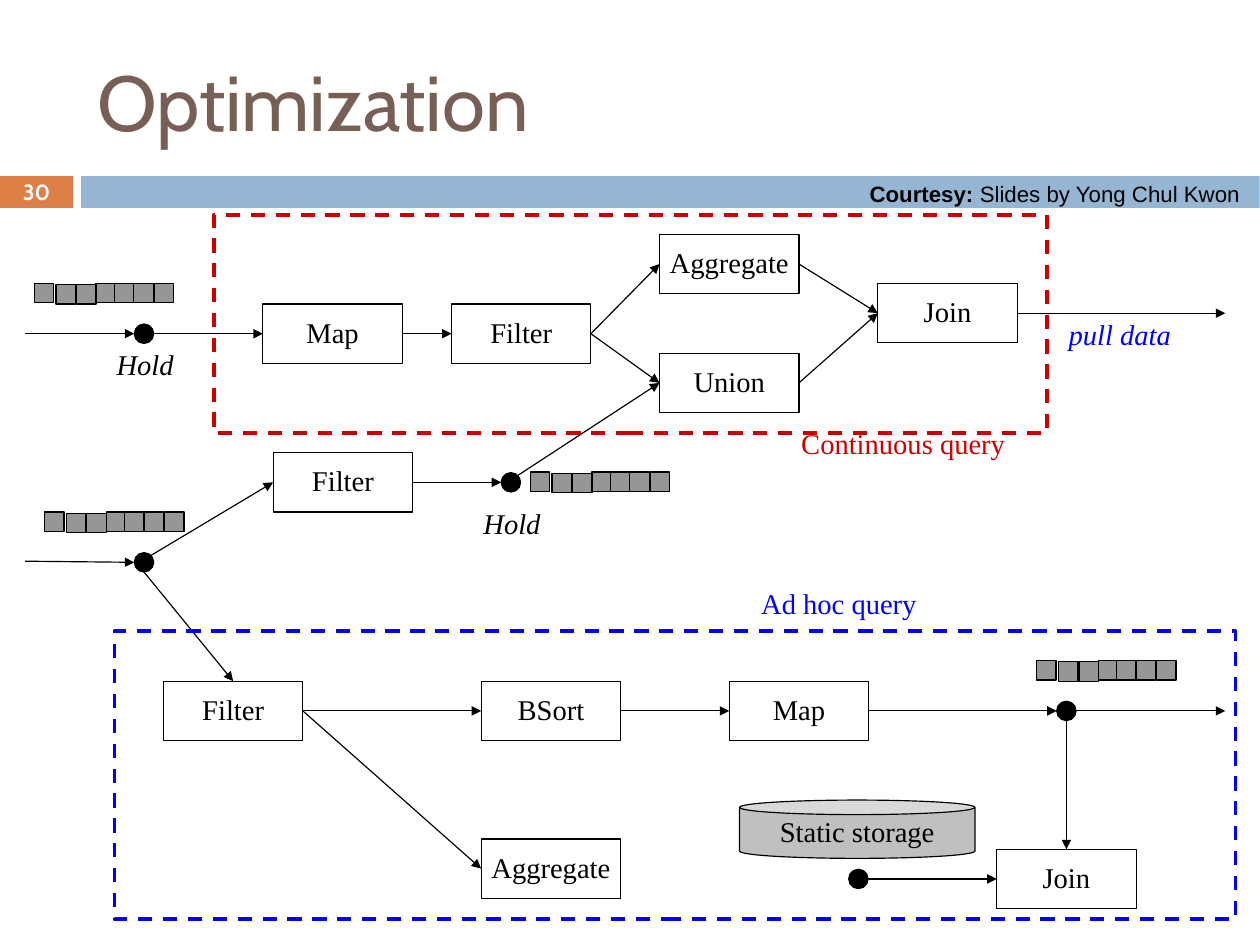
from collections import namedtuple
from math import cos, radians, sin

from lxml import etree
from pptx import Presentation
from pptx.dml.color import RGBColor
from pptx.enum.dml import MSO_LINE_DASH_STYLE as DASH
from pptx.enum.shapes import MSO_CONNECTOR, MSO_SHAPE as SHAPE
from pptx.enum.text import MSO_ANCHOR as ANCHOR, MSO_AUTO_SIZE as AUTOSIZE, PP_ALIGN as ALIGN
from pptx.oxml.ns import qn
from pptx.util import Inches, Pt

COLORS = {
    "black": "000000", "white": "FFFFFF", "orange": "DD8047", "band": "94B6D2",
    "title": "775F55", "red": "CC0000", "blue": "0000FF", "cell": "969696", "storage": "C0C0C0",
}
SERIF = "Times New Roman"
CM_PER_INCH = 2.54
BOX_W, BOX_H = 1.22, 0.52
DOT = 0.17
TOP, LEFT, BOTTOM, RIGHT = range(4)
Port = namedtuple("Port", "box side")

OPERATORS = {
    "live map": ("Map", 2.3, 2.66),
    "live filter": ("Filter", 3.95, 2.66),
    "live aggregate": ("Aggregate", 5.77, 2.05),
    "live union": ("Union", 5.77, 3.09),
    "live join": ("Join", 7.68, 2.48),
    "shared filter": ("Filter", 2.39, 3.96),
    "stored filter": ("Filter", 1.43, 5.96),
    "stored sort": ("BSort", 4.21, 5.96),
    "stored map": ("Map", 6.38, 5.96),
    "stored aggregate": ("Aggregate", 4.21, 7.34),
    "stored join": ("Join", 8.72, 7.43),
}
FLOWS = [
    ("live map", "live filter"), ("live filter", "live aggregate"),
    ("live filter", "live union"), ("live aggregate", "live join"),
    ("live union", "live join"), ("stored filter", "stored sort"),
    ("stored filter", "stored aggregate"), ("stored sort", "stored map"),
]
HOLD_1, HOLD_2, SPLIT = (1.26, 2.92), (4.47, 4.22), (1.26, 4.92)
OUTLET, STORE = (9.33, 6.22), (7.51, 7.69)
QUEUES = [(0.3, 2.48), (4.64, 4.13), (0.39, 4.48), (9.07, 5.78)]
CELL_OFFSETS = [(0, 0), (0.19, 0.01), (0.37, 0.01), (0.54, 0), (0.7, 0), (0.87, 0), (1.05, 0)]
LABELS = [
    ("Hold", 0.91, 3, 0.73, "black", True),
    ("Hold", 4.12, 4.39, 0.73, "black", True),
    ("pull data", 9.24, 2.74, 1.13, "blue", True),
    ("Continuous query", 6.9, 3.69, 2.02, "red", False),
    ("Ad hoc query", 6.55, 5.09, 1.6, "blue", False),
]


def rgb(name):
    return RGBColor.from_string(COLORS[name])


def set_margins(frame, side=0.11, end=0.06):
    frame.margin_left = frame.margin_right = Inches(side)
    frame.margin_top = frame.margin_bottom = Inches(end)


def add_run(paragraph, words, size, font, color, bold=False, italic=False):
    run = paragraph.add_run()
    run.text = words
    run.font.size, run.font.name = Pt(size), font
    run.font.bold, run.font.italic = bold, italic
    run.font.color.rgb = rgb(color)


def add_shape(parent, kind, x, y, w, h, fill=None, line="black", weight=0.75):
    shape = parent.shapes.add_shape(kind, Inches(x), Inches(y), Inches(w), Inches(h))
    shape.shadow.inherit = False
    if fill:
        shape.fill.solid()
        shape.fill.fore_color.rgb = rgb(fill)
    else:
        shape.fill.background()
    if line:
        shape.line.color.rgb = rgb(line)
        shape.line.width = Pt(weight)
    else:
        shape.line.fill.background()
    return shape


def add_node(slide, kind, words, x, y, w, h, fill):
    node = add_shape(slide, kind, x, y, w, h, fill)
    frame = node.text_frame
    set_margins(frame)
    frame.word_wrap = False
    frame.vertical_anchor = ANCHOR.MIDDLE
    paragraph = frame.paragraphs[0]
    paragraph.alignment = ALIGN.CENTER
    paragraph.line_spacing = 0.93
    add_run(paragraph, words, 18, SERIF, "black")
    return node


def add_dot(slide, center):
    x, y = center
    add_shape(slide, SHAPE.OVAL, x - DOT / 2, y - DOT / 2, DOT, DOT, "black")


def rim(center, degrees):
    x, y = center
    return x + DOT / 2 * cos(radians(degrees)), y + DOT / 2 * sin(radians(degrees))


def add_arrow(slide, start, end):
    arrow = slide.shapes.add_connector(MSO_CONNECTOR.STRAIGHT, 0, 0, 0, 0)
    if isinstance(start, Port):
        arrow.begin_connect(start.box, start.side)
    else:
        arrow.begin_x, arrow.begin_y = map(Inches, start)
    if isinstance(end, Port):
        arrow.end_connect(end.box, end.side)
    else:
        arrow.end_x, arrow.end_y = map(Inches, end)
    arrow.line.color.rgb = rgb("black")
    arrow.line.width = Pt(0.75)
    etree.SubElement(arrow.line._get_or_add_ln(), qn("a:tailEnd"), type="triangle")
    etree.SubElement(arrow._element.spPr, qn("a:effectLst"))


def add_query_frame(slide, x, y, w, h, color):
    outline = add_shape(slide, SHAPE.RECTANGLE, x, y, w, h, None, color, 2.25)
    outline.line.dash_style = DASH.DASH


def add_queue(slide, x, y):
    queue = slide.shapes.add_group_shape()
    for dx, dy in CELL_OFFSETS:
        add_shape(queue, SHAPE.RECTANGLE, x + dx, y + dy, DOT, DOT, "cell")


def add_text(slide, x, y, w, h, wrap=False, fit=AUTOSIZE.SHAPE_TO_FIT_TEXT, spacing=0.93):
    frame = slide.shapes.add_textbox(Inches(x), Inches(y), Inches(w), Inches(h)).text_frame
    set_margins(frame)
    frame.word_wrap = wrap
    frame.auto_size = fit
    frame.paragraphs[0].line_spacing = spacing
    return frame


def add_header(slide):
    add_shape(slide, SHAPE.RECTANGLE, 0, 1.54, 0.64, 0.28, "orange", None)
    add_shape(slide, SHAPE.RECTANGLE, 0.71, 1.54, 10.31, 0.28, "band", None)
    number = add_text(slide, 0, 1.53, 0.64, 0.29, True, AUTOSIZE.NONE, None)
    number.vertical_anchor = ANCHOR.MIDDLE
    number.paragraphs[0].alignment = ALIGN.CENTER
    add_run(number.paragraphs[0], "30", 13.9, "Cabin", "white", bold=True)

    title = slide.shapes.title
    title.left, title.top, title.width, title.height = map(Inches, (0.74, 0.28, 9.83, 1.19))
    set_margins(title.text_frame)
    title.text_frame.vertical_anchor = ANCHOR.MIDDLE
    heading = title.text_frame.paragraphs[0]
    heading.alignment = ALIGN.LEFT
    add_run(heading, "Optimization", 49, "Cabin", "title")

    credit = add_text(slide, 7.51, 1.55, 3.5, 0.32, wrap=True)
    set_margins(credit, 0.1, 0.05)
    add_run(credit.paragraphs[0], "Courtesy: ", 14, "Arial", "black", bold=True)
    add_run(credit.paragraphs[0], "Slides by Yong Chul Kwon", 14, "Arial", "black")


def add_flows(slide, boxes):
    for source, target in FLOWS:
        add_arrow(slide, Port(boxes[source], RIGHT), Port(boxes[target], LEFT))
    for start, end in [
        ((0.22, 2.92), rim(HOLD_1, 180)),
        (rim(HOLD_1, 0), Port(boxes["live map"], LEFT)),
        (Port(boxes["live join"], RIGHT), (10.72, 2.74)),
        ((0.22, 4.91), rim(SPLIT, 180)),
        (rim(SPLIT, -45), Port(boxes["shared filter"], LEFT)),
        (rim(SPLIT, 90), Port(boxes["stored filter"], TOP)),
        (Port(boxes["shared filter"], RIGHT), rim(HOLD_2, 180)),
        (rim(HOLD_2, -45), Port(boxes["live union"], LEFT)),
        (Port(boxes["stored map"], RIGHT), rim(OUTLET, 180)),
        (rim(OUTLET, 0), (10.72, 6.22)),
        (rim(OUTLET, 90), Port(boxes["stored join"], TOP)),
        (rim(STORE, 0), Port(boxes["stored join"], LEFT)),
    ]:
        add_arrow(slide, start, end)


def main():
    deck = Presentation()
    deck.slide_width = Inches(28 / CM_PER_INCH)
    deck.slide_height = Inches(21 / CM_PER_INCH)
    slide = deck.slides.add_slide(deck.slide_layouts[5])
    add_header(slide)
    boxes = {
        key: add_node(slide, SHAPE.RECTANGLE, words, x, y, BOX_W, BOX_H, "white")
        for key, (words, x, y) in OPERATORS.items()
    }
    add_node(slide, SHAPE.CAN, "Static storage", 6.47, 7, 2.06, 0.51, "storage")
    for center in (HOLD_1, HOLD_2, SPLIT, OUTLET, STORE):
        add_dot(slide, center)
    add_flows(slide, boxes)
    add_query_frame(slide, 1.87, 1.88, 7.29, 1.91, "red")
    add_query_frame(slide, 1, 5.52, 9.81, 2.52, "blue")
    for x, y in QUEUES:
        add_queue(slide, x, y)
    for words, x, y, w, color, italic in LABELS:
        label = add_text(slide, x, y, w, 0.39)
        add_run(label.paragraphs[0], words, 18, SERIF, color, italic=italic)
    deck.save("out.pptx")


if __name__ == "__main__":
    main()
